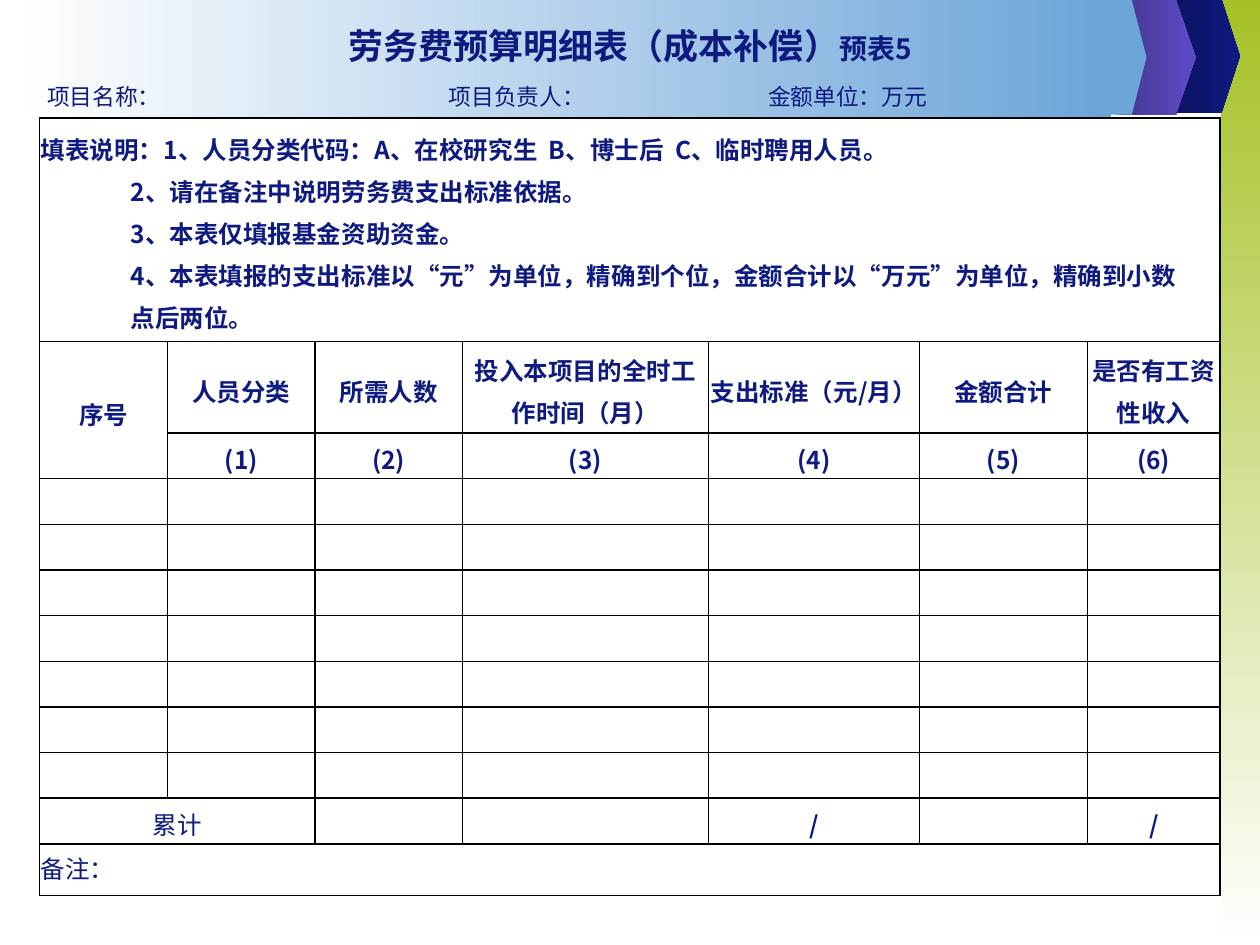
import pptx
import pptx.dml.color
import pptx.enum.shapes
import pptx.enum.text
import pptx.oxml
import pptx.oxml.ns
import pptx.util
from dataclasses import dataclass

Pt = pptx.util.Pt
RGB = pptx.dml.color.RGBColor.from_string
Kind = pptx.enum.shapes.MSO_SHAPE
Align = pptx.enum.text.PP_ALIGN
Anchor = pptx.enum.text.MSO_ANCHOR
qn = pptx.oxml.ns.qn


@dataclass(frozen=True)
class Theme:
    font: str = "Noto Sans CJK SC"
    ink: str = "0F1A81"
    border: str = "000000"
    title: int = 20
    form_number: int = 16
    info: int = 13
    cell: int = 14
    leading: int = 24


THEME = Theme()

TITLE = ("劳务费预算明细表（成本补偿）", "预表5")
INFO = ("项目名称：", "项目负责人：", "金额单位：万元")
INFO_LEFTS = (27, 256.5, 439)

NOTES = (
    "填表说明：1、人员分类代码：A、在校研究生  B、博士后  C、临时聘用人员。",
    "2、请在备注中说明劳务费支出标准依据。",
    "3、本表仅填报基金资助资金。",
    "4、本表填报的支出标准以“元”为单位，精确到个位，金额合计以“万元”为单位，精确到小数\v点后两位。",
)
NOTE_INDENT = 51.4
HEADERS = ("序号", "人员分类", "所需人数", "投入本项目的全时工作时间（月）",
           "支出标准（元/月）", "金额合计", "是否有工资性收入")
BLANK_ROWS = 7
TOTAL = ("累计", "", "", "", "/", "", "/")
REMARK = "备注："

TABLE_LEFT, TABLE_TOP = 22.6, 67.5
COLUMNS = (73.2, 84.2, 84.2, 140.6, 120.6, 96.2, 75.6)
ROWS = (127.8, 52.2) + (26.1,) * (BLANK_ROWS + 2) + (29.4,)

# kind, left, top, width, height, colours, gradient angle (counter-clockwise)
DECOR = (
    (Kind.RECTANGLE, 697.7, 0, 22.3, 540, ("A4C226", "FFFFFF"), 270),
    (Kind.PENTAGON, 666, -0.7, 42.5, 65.5, ("0B135C", "0F1A81"), 0),
    (Kind.PENTAGON, 638, 0, 45.3, 65.5, ("43368E", "5D4BC7"), 0),
    (Kind.RECTANGLE, 8.6, 0, 626.4, 67, ("FFFFFF", "6CA5D8"), 0),
    (Kind.PENTAGON, 621.4, 0, 33.8, 65.5, ("6CA5D8",), 0),
)


def add_decor(page, kind, left, top, width, height, colours, angle):
    shape = page.shapes.add_shape(kind, Pt(left), Pt(top), Pt(width), Pt(height))
    shape.shadow.inherit = False
    shape.line.fill.background()
    if kind == Kind.PENTAGON:
        shape.adjustments[0] = 0.25
    if len(colours) == 1:
        shape.fill.solid()
        shape.fill.fore_color.rgb = RGB(colours[0])
        return
    shape.fill.gradient()
    shape.fill.gradient_angle = angle
    for stop, colour in zip(shape.fill.gradient_stops, colours):
        stop.color.rgb = RGB(colour)


def style(para, size, bold=True, align=Align.LEFT):
    para.alignment = align
    font = para.font
    font.name, font.size, font.bold = THEME.font, Pt(size), bold
    font.color.rgb = RGB(THEME.ink)
    latin = para._p.pPr.find(qn("a:defRPr")).find(qn("a:latin"))
    east_asian = pptx.oxml.parse_xml(
        f'<a:ea {pptx.oxml.ns.nsdecls("a")} typeface="{THEME.font}"/>')
    latin.addnext(east_asian)


def clear_frame(frame, anchor=Anchor.MIDDLE):
    frame.margin_left = frame.margin_right = frame.margin_top = frame.margin_bottom = 0
    frame.vertical_anchor = anchor
    frame.word_wrap = True


def add_title(page):
    title = page.shapes.title
    title.left, title.top, title.width, title.height = Pt(100), Pt(8), Pt(520), Pt(36)
    clear_frame(title.text_frame)
    para = title.text_frame.paragraphs[0]
    style(para, THEME.title, align=Align.CENTER)
    for words, size in zip(TITLE, (THEME.title, THEME.form_number)):
        span = para.add_run()
        span.text = words
        span.font.size = Pt(size)
    title.element.getparent().append(title.element)  # in front of the banner


def add_info(page):
    start = INFO_LEFTS[0]
    box = page.shapes.add_textbox(Pt(start), Pt(43), Pt(600), Pt(24))
    clear_frame(box.text_frame)
    para = box.text_frame.paragraphs[0]
    para.text = "\t".join(INFO)
    style(para, THEME.info, bold=False)
    stops = "".join(f'<a:tab pos="{int(Pt(left - start))}" algn="l"/>'
                    for left in INFO_LEFTS[1:])
    tabs = pptx.oxml.parse_xml(
        f'<a:tabLst {pptx.oxml.ns.nsdecls("a")}>{stops}</a:tabLst>')
    para._p.pPr.find(qn("a:defRPr")).addprevious(tabs)


def add_borders(cell):
    properties = cell._tc.get_or_add_tcPr()
    for index, side in enumerate("LRTB"):
        properties.insert(index, pptx.oxml.parse_xml(
            f'<a:ln{side} {pptx.oxml.ns.nsdecls("a")} w="{int(Pt(1))}"><a:solidFill>'
            f'<a:srgbClr val="{THEME.border}"/></a:solidFill></a:ln{side}>'))


def fill_cell(cell, words, bold=True, align=Align.CENTER, anchor=Anchor.MIDDLE):
    cell.margin_left = cell.margin_right = Pt(0.7)
    cell.margin_top = cell.margin_bottom = 0
    cell.vertical_anchor = anchor
    cell.fill.background()
    add_borders(cell)
    cell.text = words
    for para in cell.text_frame.paragraphs:
        style(para, THEME.cell, bold, align)
        para.line_spacing = Pt(THEME.leading)


def add_budget_table(page):
    table = page.shapes.add_table(len(ROWS), len(COLUMNS), Pt(TABLE_LEFT), Pt(TABLE_TOP),
                                  Pt(sum(COLUMNS)), Pt(sum(ROWS))).table
    table.first_row = table.horz_banding = False
    for column, width in zip(table.columns, COLUMNS):
        column.width = Pt(width)
    for row, height in zip(table.rows, ROWS):
        row.height = Pt(height)

    last_row, last_column = len(ROWS) - 1, len(COLUMNS) - 1
    total_row = last_row - 1
    for first, last in (((0, 0), (0, last_column)), ((1, 0), (2, 0)),
                        ((total_row, 0), (total_row, 1)),
                        ((last_row, 0), (last_row, last_column))):
        table.cell(*first).merge(table.cell(*last))

    blank = ("",) * len(COLUMNS)
    numbers = ("",) + tuple(f"({n})" for n in range(1, len(COLUMNS)))
    grid = [("\n".join(NOTES),) + blank[1:], HEADERS, numbers,
            *[blank] * BLANK_ROWS, TOTAL, (REMARK,) + blank[1:]]
    for r, line in enumerate(grid):
        for c, words in enumerate(line):
            fill_cell(table.cell(r, c), words,
                      bold=words not in (TOTAL[0], REMARK),
                      align=Align.LEFT if r in (0, last_row) else Align.CENTER,
                      anchor=Anchor.TOP if r == last_row else Anchor.MIDDLE)
    for para in table.cell(0, 0).text_frame.paragraphs[1:]:
        para._p.pPr.set("marL", str(int(Pt(NOTE_INDENT))))


def main():
    deck = pptx.Presentation()
    deck.slide_width, deck.slide_height = Pt(720), Pt(540)
    page = deck.slides.add_slide(deck.slide_layouts.get_by_name("Title Only"))
    for decor in DECOR:
        add_decor(page, *decor)
    add_budget_table(page)
    add_title(page)
    add_info(page)
    deck.save("out.pptx")


if __name__ == "__main__":
    main()
